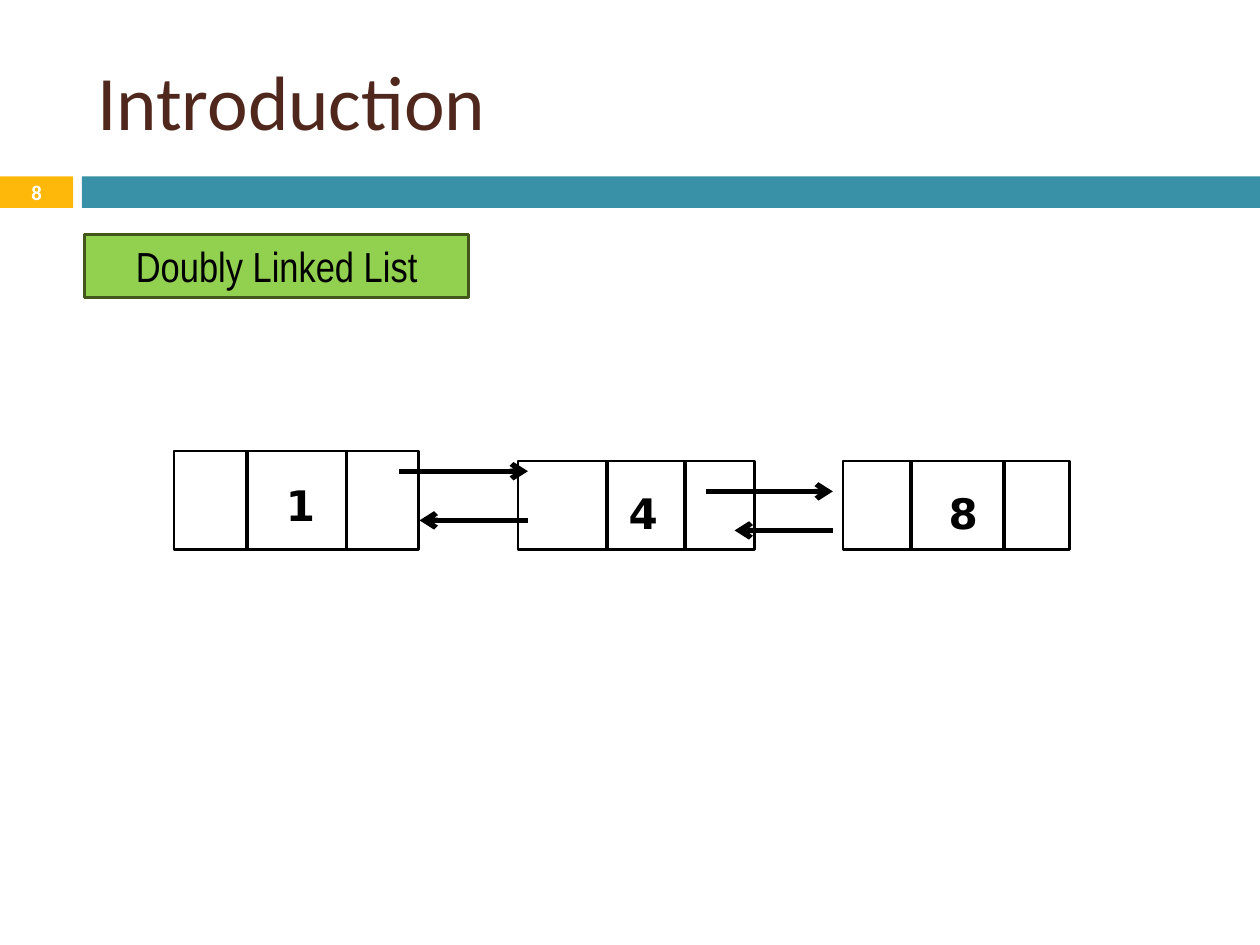
from dataclasses import dataclass

import pptx
import pptx.dml.color
import pptx.enum.shapes
import pptx.enum.text
import pptx.oxml
import pptx.oxml.ns
import pptx.util
from pptx.util import Inches

ALIGN = pptx.enum.text.PP_ALIGN
ANCHOR = pptx.enum.text.MSO_ANCHOR


@dataclass(frozen=True)
class Style:
    font: str
    size: float
    color: str
    bold: bool = False


@dataclass(frozen=True)
class Theme:
    white: str = "FFFFFF"
    black: str = "000000"
    gold: str = "FEB80A"
    teal: str = "3891A7"
    green: str = "92D050"
    dark_green: str = "42551A"
    outline: float = 1.5
    divider: float = 2.25
    arrow: float = 3
    title: Style = Style("Calibri", 44, "4F271C")
    number: Style = Style("Calibri", 11.9, "FFFFFF", True)
    label: Style = Style("Arial Narrow", 24, "000000")
    value: Style = Style("DejaVu Sans", 24, "000000", True)


@dataclass(frozen=True)
class Box:
    left: float
    top: float
    width: float
    height: float

    def emu(self) -> tuple[int, ...]:
        return tuple(Inches(v) for v in (self.left, self.top, self.width, self.height))


@dataclass(frozen=True)
class Node:
    value: str
    box: Box
    dividers: tuple[float, float]
    value_box: Box


@dataclass(frozen=True)
class Link:
    start: float
    end: float
    y: float


THEME = Theme()
NODES = (
    Node("1", Box(1.38, 3.58, 1.94, 0.78), (1.96, 2.75), Box(2.17, 3.76, 0.4, 0.39)),
    Node("4", Box(4.11, 3.66, 1.88, 0.7), (4.82, 5.44), Box(4.89, 3.82, 0.4, 0.35)),
    Node("8", Box(6.69, 3.66, 1.8, 0.7), (7.23, 7.97), Box(7.43, 3.82, 0.38, 0.35)),
)
LINKS = (
    Link(3.17, 4.19, 3.74),
    Link(4.19, 3.33, 4.13),
    Link(5.6, 6.61, 3.9),
    Link(6.61, 5.83, 4.21),
)


def rgb(color: str) -> pptx.dml.color.RGBColor:
    return pptx.dml.color.RGBColor.from_string(color)


def write(tf, text: str, style: Style, align=ALIGN.CENTER, anchor=ANCHOR.MIDDLE, wrap: bool = True) -> None:
    tf.word_wrap = wrap
    tf.vertical_anchor = anchor
    p = tf.paragraphs[0]
    p.alignment = align
    r = p.add_run()
    r.text = text
    r.font.name = style.font
    r.font.size = pptx.util.Pt(style.size)
    r.font.bold = style.bold
    r.font.color.rgb = rgb(style.color)


def add_rect(s, box: Box, fill: str, line: str | None = None):
    sp = s.shapes.add_shape(pptx.enum.shapes.MSO_SHAPE.RECTANGLE, *box.emu())
    sp.shadow.inherit = False
    sp.fill.solid()
    sp.fill.fore_color.rgb = rgb(fill)
    if line:
        sp.line.color.rgb = rgb(line)
        sp.line.width = pptx.util.Pt(THEME.outline)
    else:
        sp.line.fill.background()
    return sp


def add_line(s, x1: float, y1: float, x2: float, y2: float, width: float, arrow: bool = False) -> None:
    ends = (Inches(v) for v in (x1, y1, x2, y2))
    cxn = s.shapes.add_connector(pptx.enum.shapes.MSO_CONNECTOR.STRAIGHT, *ends)
    cxn.line.color.rgb = rgb(THEME.black)
    cxn.line.width = pptx.util.Pt(width)
    if arrow:
        tail = pptx.oxml.parse_xml(f'<a:tailEnd {pptx.oxml.ns.nsdecls("a")} type="arrow"/>')
        cxn.line._get_or_add_ln().append(tail)
    effects = pptx.oxml.parse_xml(f'<a:effectLst {pptx.oxml.ns.nsdecls("a")}/>')
    cxn._element.spPr.append(effects)


def add_node(s, node: Node) -> None:
    box = node.box
    add_rect(s, box, THEME.white, THEME.black)
    for x in node.dividers:
        add_line(s, x, box.top, x, box.top + box.height, THEME.divider)
    tb = s.shapes.add_textbox(*node.value_box.emu())
    write(tb.text_frame, node.value, THEME.value, anchor=ANCHOR.TOP, wrap=False)


def add_link(s, link: Link) -> None:
    add_line(s, link.start, link.y, link.end, link.y, THEME.arrow, arrow=True)


def add_title(s, text: str) -> None:
    sp = s.shapes.title
    sp.left, sp.top, sp.width, sp.height = Box(0.67, 0.25, 8.92, 1.08).emu()
    write(sp.text_frame, text, THEME.title, align=ALIGN.LEFT)


def main() -> None:
    prs = pptx.Presentation()
    prs.slide_width, prs.slide_height = Inches(10), Inches(7.5)
    s = prs.slides.add_slide(prs.slide_layouts[5])

    add_title(s, "Introduction")
    number = add_rect(s, Box(0, 1.4, 0.58, 0.25), THEME.gold)
    write(number.text_frame, "8", THEME.number)
    add_rect(s, Box(0.65, 1.4, 9.35, 0.25), THEME.teal)
    label = add_rect(s, Box(0.67, 1.86, 3.05, 0.5), THEME.green, THEME.dark_green)
    write(label.text_frame, "Doubly Linked List", THEME.label)

    for node in NODES:
        add_node(s, node)
    for link in LINKS:
        add_link(s, link)

    prs.save("out.pptx")


if __name__ == "__main__":
    main()
